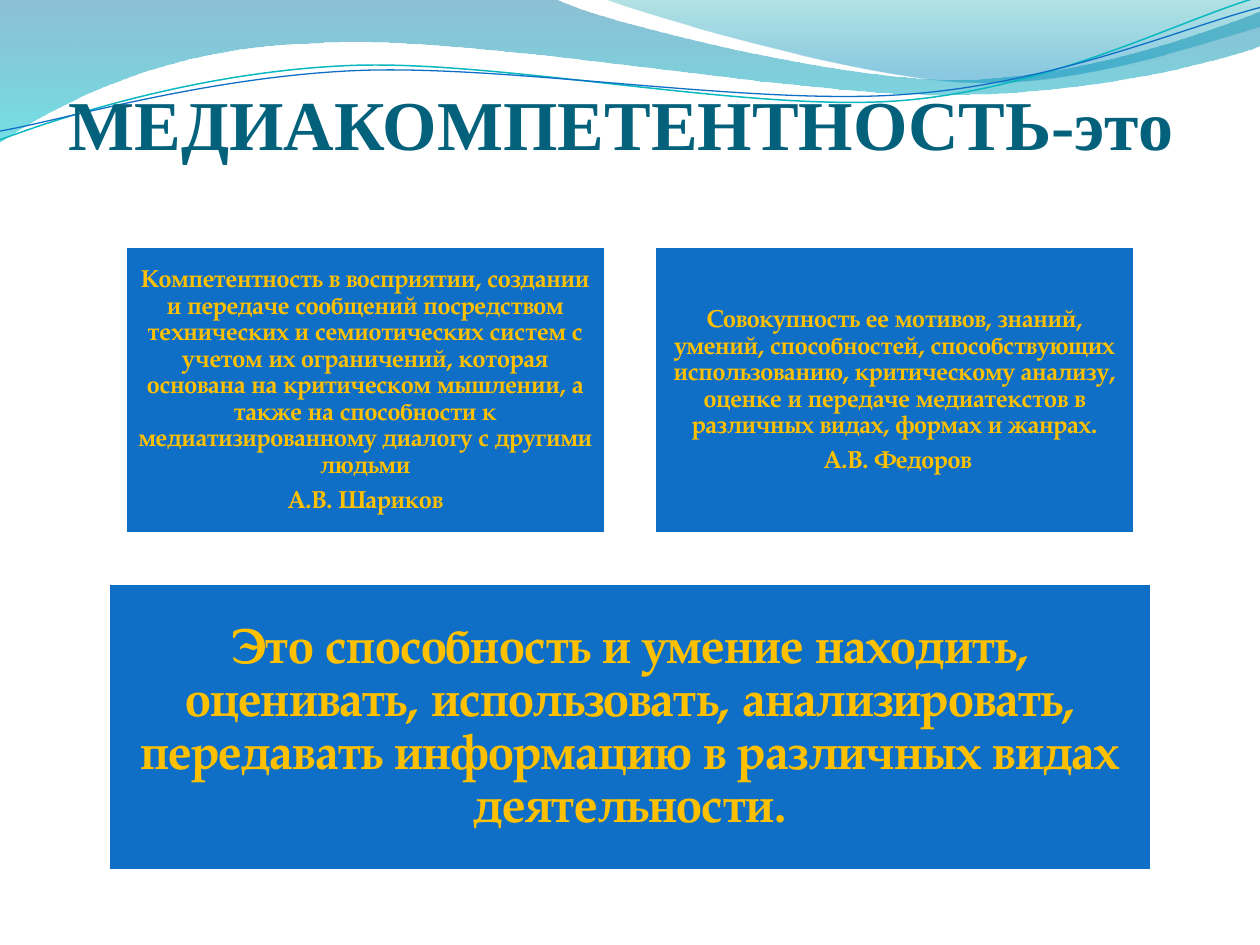
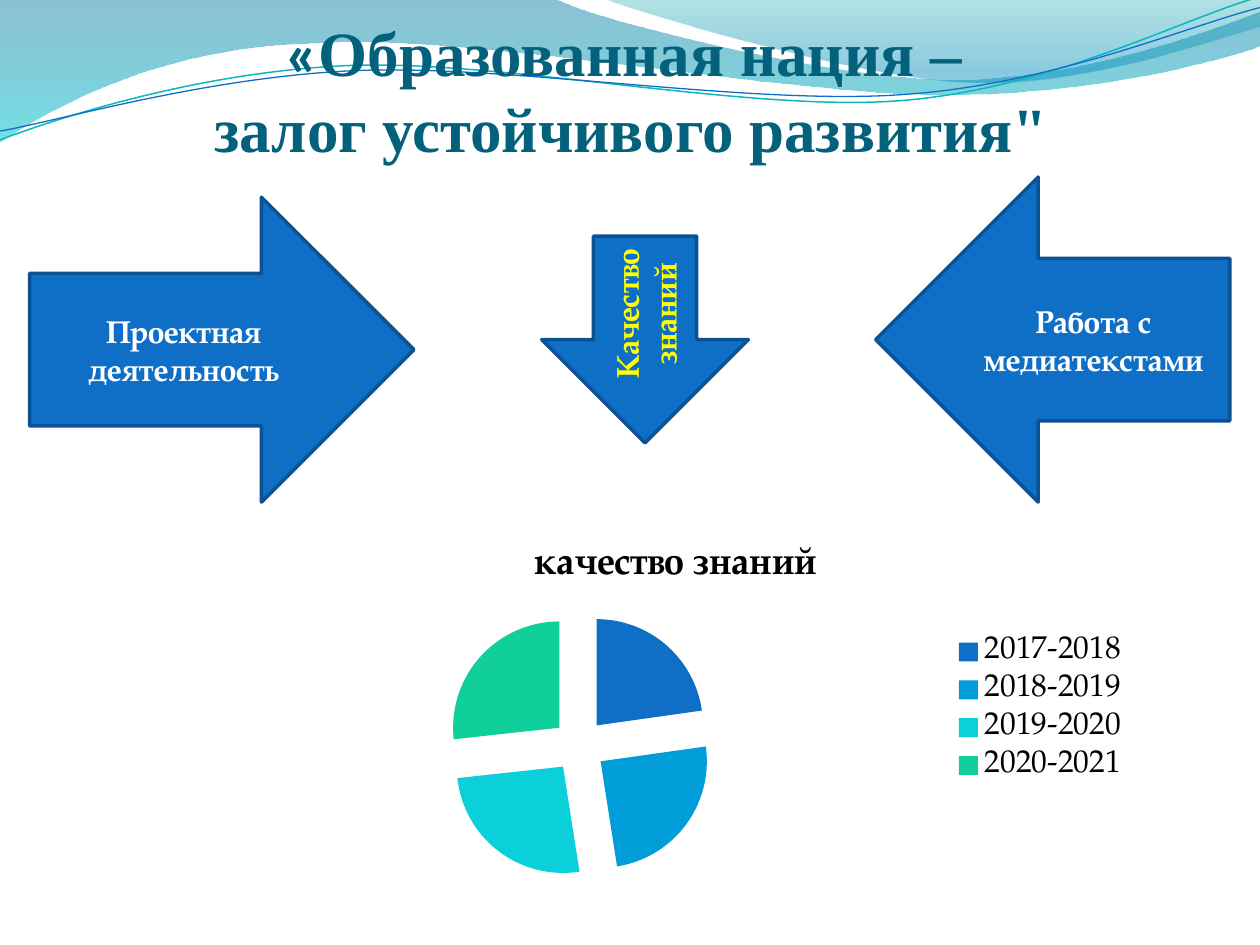
import math

import lxml.etree
import pptx
import pptx.chart.data
import pptx.dml.color
import pptx.enum.chart
import pptx.enum.shapes
import pptx.enum.text
import pptx.oxml.ns
import pptx.util

COLORS = {
    "title": "04617B",
    "blue": "0F6FC6",
    "dark_blue": "0B5292",
    "sky": "009DD9",
    "cyan": "0BD0D9",
    "green": "10CF9B",
    "teal": "0AB8BF",
    "gold": "FFC000",
    "yellow": "FFFF00",
    "white": "FFFFFF",
    "black": "000000",
    "wave_top": "0074A1",
    "wave_bottom": "00C6CF",
    "crest_top": "00A1A9",
    "crest_bottom": "008BBF",
}
SERIF = "Times New Roman"
BODY = "TeX Gyre Pagella"
COLUMNS, ROWS = 100, 75
CURVE_TILT = 357.3
SHAPES = pptx.enum.shapes.MSO_SHAPE
ANCHORS = pptx.enum.text.MSO_ANCHOR

WAVE = [
    [(0, 0)],
    [(44, -0.1)],
    [(47.6, 1.7), (66.4, 6.3), (75.8, 6.3)],
    [(85.3, 6.3), (95.8, 2.6), (100, 0.9)],
    [(100.1, 3.6)],
    [(98.3, 4.4), (87, 7.6), (74.6, 7.5)],
    [(62.2, 7.5), (38.2, 2.8), (25.7, 3.4)],
    [(12.9, 3.6), (4.6, 8.3), (-0.1, 11.3)],
    [(0, 0)],
]
CREST = [
    [(47.9, -0.1)],
    [(50.9, 1.1), (68.2, 6.2), (76.9, 6.5)],
    [(85.6, 6.9), (96.1, 3.2), (100, 2.1)],
    [(100, 0)],
    [(47.9, -0.1)],
]
TEAL_LINE = [
    [(0, 11.1)],
    [(4.8, 9.3), (15.8, 5.7), (27.7, 5.2)],
    [(39.5, 4.7), (59.3, 8.9), (71.3, 8)],
    [(83.3, 7.1), (93.8, 1.5), (99.8, -0.2)],
]
BLUE_LINE = [
    [(0, 10.4)],
    [(4.7, 9.6), (16.4, 6.1), (28.3, 5.6)],
    [(40.3, 5.1), (59.7, 8.4), (71.7, 7.5)],
    [(83.6, 6.7), (94.1, 2.1), (100, 0.6)],
]


def rgb(name):
    return pptx.dml.color.RGBColor.from_string(COLORS[name])


def turn(segments, center, degrees):
    cosine, sine = math.cos(math.radians(degrees)), math.sin(math.radians(degrees))
    return [[(center[0] + (x - center[0]) * cosine - (y - center[1]) * sine,
              center[1] + (x - center[0]) * sine + (y - center[1]) * cosine)
             for x, y in segment] for segment in segments]


def bend(shape, segments):
    nodes = iter(shape.element.xpath(".//a:path/a:lnTo"))
    for segment in segments[1:]:
        corners = [next(nodes) for _ in segment]
        if len(corners) == 3:
            curve = lxml.etree.Element(pptx.oxml.ns.qn("a:cubicBezTo"))
            corners[0].addprevious(curve)
            for corner in corners:
                curve.append(corner[0])
                corner.getparent().remove(corner)


def write_text(frame, paragraphs, size, color, font=BODY, spacing=None, after=0):
    for index, content in enumerate(paragraphs):
        paragraph = frame.paragraphs[0] if index == 0 else frame.add_paragraph()
        paragraph.alignment = pptx.enum.text.PP_ALIGN.CENTER
        if after:
            paragraph.space_after = pptx.util.Pt(size * after)
        if spacing:
            paragraph.line_spacing = spacing
        runs = [(content, font)] if isinstance(content, str) else content
        for text, run_font in runs:
            for number, line in enumerate(text.split("\n")):
                if number:
                    paragraph.add_line_break()
                run = paragraph.add_run()
                run.text = line
                run.font.name = run_font
                run.font.size = pptx.util.Pt(size)
                run.font.bold = True
                run.font.color.rgb = rgb(color)
    for line_break in frame.paragraphs[0].runs[0].font and frame.paragraphs[0].line_breaks \
            if hasattr(frame.paragraphs[0], "line_breaks") else []:
        line_break.font.size = pptx.util.Pt(size)


class Deck:
    def __init__(self):
        self.presentation = pptx.Presentation()
        self.presentation.slide_width = pptx.util.Inches(10)
        self.presentation.slide_height = pptx.util.Inches(7.5)
        self.column = self.presentation.slide_width / COLUMNS
        self.row = self.presentation.slide_height / ROWS
        self.slide = None

    def place(self, left, top, width, height):
        return (round(left * self.column), round(top * self.row),
                round(width * self.column), round(height * self.row))

    def add_slide(self, title, box, size):
        layout = self.presentation.slide_layouts[5]
        self.slide = self.presentation.slides.add_slide(layout)
        shape = self.slide.shapes.title
        shape.left, shape.top, shape.width, shape.height = self.place(*box)
        self.set_frame(shape.text_frame, ANCHORS.BOTTOM, (0, 0.05, 0, 0))
        write_text(shape.text_frame, title, size, "title", SERIF)
        for line_break in shape.element.xpath(".//a:br"):
            lxml.etree.SubElement(line_break, pptx.oxml.ns.qn("a:rPr"), sz=str(size * 100))

    def set_frame(self, frame, anchor, insets):
        frame.word_wrap = True
        frame.auto_size = pptx.enum.text.MSO_AUTO_SIZE.NONE
        frame.vertical_anchor = anchor
        (frame.margin_left, frame.margin_top, frame.margin_right,
         frame.margin_bottom) = map(pptx.util.Inches, insets)

    def add_outline(self, segments, closed):
        points = [(round(x * self.column), round(y * self.row))
                  for segment in segments for x, y in segment]
        builder = self.slide.shapes.build_freeform(*points[0])
        builder.add_line_segments(points[1:], close=closed)
        shape = builder.convert_to_shape()
        shape.shadow.inherit = False
        bend(shape, segments)
        return shape

    def add_gradient(self, segments, stops):
        shape = self.add_outline(segments, True)
        shape.line.fill.background()
        shape.fill.gradient()
        shape.fill.gradient_angle = 270
        for stop, (position, color, _) in zip(shape.fill.gradient_stops, stops):
            stop.position = position
            stop.color.rgb = rgb(color)
        for node, (_, _, opacity) in zip(shape.element.xpath(".//a:gs/a:srgbClr"), stops):
            lxml.etree.SubElement(node, pptx.oxml.ns.qn("a:alpha"), val=str(opacity * 1000))
        return shape

    def add_curve(self, segments, center, color, width):
        shape = self.add_outline(turn(segments, center, 360 - CURVE_TILT), False)
        shape.rotation = CURVE_TILT
        shape.fill.background()
        shape.line.color.rgb = rgb(color)
        shape.line.width = pptx.util.Pt(width)
        return shape

    def add_backdrop(self):
        backdrop = [
            self.add_gradient(WAVE, [(0, "wave_top", 45), (1, "wave_bottom", 55)]),
            self.add_gradient(CREST, [(0, "crest_top", 30), (0.8, "crest_bottom", 45)]),
            self.add_curve(TEAL_LINE, (49.9, 5.75), "teal", 0.85),
            self.add_curve(BLUE_LINE, (49.95, 5.9), "blue", 0.75),
        ]
        tree = self.presentation.slide_master.shapes.element
        for index, shape in enumerate(backdrop):
            shape.element.xpath(".//p:cNvPr")[0].set("id", str(100 + index))
            tree.insert(2 + index, shape.element)

    def add_block(self, kind, box, paragraphs, size, color, line, insets, vertical=None, **style):
        shape = self.slide.shapes.add_shape(kind, *self.place(*box))
        shape.shadow.inherit = False
        shape.fill.solid()
        shape.fill.fore_color.rgb = rgb("blue")
        shape.line.color.rgb = rgb(line)
        shape.line.width = pptx.util.Pt(2)
        self.set_frame(shape.text_frame, ANCHORS.MIDDLE, insets)
        if vertical:
            shape.element.xpath(".//a:bodyPr")[0].set("vert", vertical)
        write_text(shape.text_frame, paragraphs, size, color, **style)

    def add_card(self, box, paragraphs, size, inset):
        self.add_block(SHAPES.RECTANGLE, box, paragraphs, size, "gold", "white",
                       [inset] * 4, spacing=0.9, after=0.35)

    def add_arrow(self, kind, box, text, color="white", vertical=None):
        self.add_block(kind, box, [text], 18, color, "dark_blue",
                       (0.1, 0.05, 0.1, 0.05), vertical)

    def add_pie(self, box, title, values, colors, explosion):
        data = pptx.chart.data.CategoryChartData()
        data.categories = list(values)
        data.add_series(title, list(values.values()))
        chart = self.slide.shapes.add_chart(
            pptx.enum.chart.XL_CHART_TYPE.PIE, *self.place(*box), data).chart
        chart.font.name = BODY
        chart.font.size = pptx.util.Pt(18)
        chart.font.color.rgb = rgb("black")
        chart.has_title = True
        write_text(chart.chart_title.text_frame, [title], 21.6, "black")
        chart.has_legend = True
        chart.legend.position = pptx.enum.chart.XL_LEGEND_POSITION.RIGHT
        chart.legend.include_in_layout = False
        plot = chart.plots[0]
        plot.vary_by_categories = True
        for index, color in enumerate(colors):
            fill = plot.series[0].points[index].format.fill
            fill.solid()
            fill.fore_color.rgb = rgb(color)
        node = lxml.etree.Element(pptx.oxml.ns.qn("c:explosion"), val=str(explosion))
        chart.element.xpath(".//c:dPt")[0].addprevious(node)


def build_definition(deck):
    deck.add_slide(["МЕДИАКОМПЕТЕНТНОСТЬ-это"], (4.3, 2.85, 90, 10.2), 40)
    deck.add_backdrop()
    definitions = [
        ["Компетентность в восприятии, создании и передаче сообщений посредством "
         "технических и семиотических систем с учетом их ограничений, которая основана "
         "на критическом мышлении, а также на способности к медиатизированному диалогу "
         "с другими людьми", "А.В. Шариков"],
        ["Совокупность ее мотивов, знаний, умений, способностей, способствующих "
         "использованию, критическому анализу, оценке и передаче медиатекстов в "
         "различных видах, формах и жанрах.", " А.В. Федоров"],
    ]
    top, width, height, gap = 19.55, 38.1, 22.85, 3.9
    left = (COLUMNS - 2 * width - gap) / 2
    for index, paragraphs in enumerate(definitions):
        deck.add_card((left + index * (width + gap), top, width, height), paragraphs, 14, 0.06)
    summary_width = 82.8
    deck.add_card(
        ((COLUMNS - summary_width) / 2, top + height + gap, summary_width, height),
        ["Это способность и умение находить, оценивать, использовать, анализировать, "
         "передавать информацию в различных видах деятельности."], 28, 0.12)


def build_quality(deck):
    title = [[("«", "Calibri"),
              ("Образованная нация – \nзалог устойчивого развития\"", SERIF)]]
    deck.add_slide(title, (5.1, 3.6, 90, 9.5), 36)
    deck.add_arrow(SHAPES.RIGHT_ARROW, (2.35, 15.65, 30.5, 24.2), "Проектная деятельность")
    deck.add_arrow(SHAPES.LEFT_ARROW, (69.5, 14.05, 28.1, 25.8), "Работа с медиатекстами")
    deck.add_arrow(SHAPES.DOWN_ARROW, (43, 18.75, 16.4, 16.4), "Качество знаний",
                   "yellow", "vert270")
    quality = {"2017-2018": 23, "2018-2019": 25, "2019-2020": 26, "2020-2021": 27}
    deck.add_pie((16.65, 41.4, 74, 29.7), "качество знаний", quality,
                 ["blue", "sky", "cyan", "green"], 25)


def main():
    deck = Deck()
    build_definition(deck)
    build_quality(deck)
    deck.presentation.save("out.pptx")


if __name__ == "__main__":
    main()
